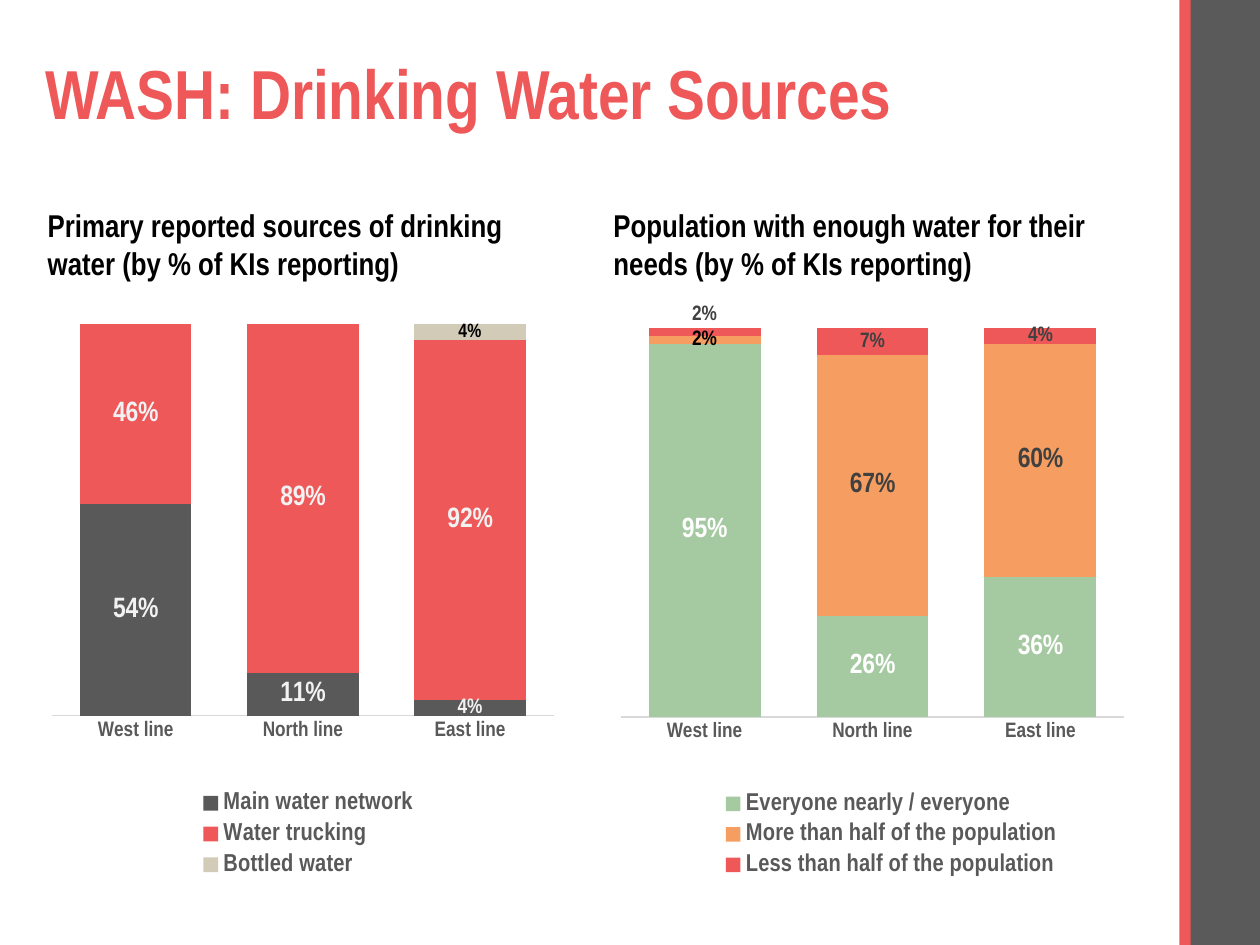
from lxml.etree import SubElement
from pptx import Presentation
from pptx.chart.data import CategoryChartData
from pptx.dml.color import RGBColor
from pptx.enum.chart import XL_CHART_TYPE, XL_LEGEND_POSITION, XL_TICK_LABEL_POSITION, XL_TICK_MARK
from pptx.enum.shapes import MSO_SHAPE
from pptx.enum.text import MSO_ANCHOR
from pptx.oxml import parse_xml
from pptx.oxml.ns import nsdecls, qn
from pptx.util import Inches, Pt

RED, GREY, LIGHT, DARK = "EE5859", "595959", "F2F2F2", "404040"


def style(font, size, color, bold=True):
    font.name = "Arial Narrow"
    font.size = Pt(size)
    font.bold = bold
    font.color.rgb = RGBColor.from_string(color)


def set_layout(parent, index, **settings):
    """Give a chart part a manual layout, as shares of the chart's size."""
    for old in parent.findall(qn("c:layout")):
        parent.remove(old)
    layout = parse_xml(f"<c:layout {nsdecls('c')}><c:manualLayout/></c:layout>")
    for name, value in settings.items():
        SubElement(layout[0], qn(f"c:{name}")).set("val", str(value))
    parent.insert(index, layout)


presentation = Presentation()
presentation.slide_width, presentation.slide_height = Inches(10), Inches(7.5)
slide = presentation.slides.add_slide(presentation.slide_layouts[6])

# Side band
for left, width, color in [(9.43, 0.57, "5A5A5A"), (9.36, 0.09, RED)]:
    band = slide.shapes.add_shape(MSO_SHAPE.RECTANGLE, Inches(left), 0,
                                  Inches(width), presentation.slide_height)
    band.shadow.inherit = False
    band.fill.solid()
    band.fill.fore_color.rgb = RGBColor.from_string(color)
    band.line.fill.background()

# Title and chart headings
texts = [
    ("WASH: Drinking Water Sources", 0.26, 0.4, 8.69, 0.74, 39.6, RED),
    ("Primary reported sources of drinking water (by % of KIs reporting)",
     0.28, 1.58, 4.18, 0.71, 18, "000000"),
    ("Population with enough water for their needs (by % of KIs reporting)",
     4.77, 1.58, 4.31, 0.71, 18, "000000"),
]
for text, left, top, width, height, size, color in texts:
    box = slide.shapes.add_textbox(Inches(left), Inches(top), Inches(width), Inches(height))
    frame = box.text_frame
    frame.word_wrap = True
    frame.vertical_anchor = MSO_ANCHOR.MIDDLE
    paragraph = frame.paragraphs[0]
    paragraph.text = text
    paragraph.line_spacing = 0.9 if size > 30 else 1.0
    style(paragraph.font, size, color)

# Charts: left, width, legend left and width (shares), series
# Series: name, fill, values, (size, colour) of each label
charts = [
    (0.26, 4.29, 0.3, 0.42, [
        ("Main water network", GREY, (0.54, 0.11, 0.04), [(16, LIGHT), (16, LIGHT), (12, LIGHT)]),
        ("Water trucking", RED, (0.46, 0.89, 0.92), [(16, LIGHT)] * 3),
        ("Bottled water", "D2CBB8", (0, 0, 0.04), [None, None, (11, "000000")]),
    ]),
    (4.77, 4.31, 0.21, 0.65, [
        ("Everyone nearly / everyone", "A5C9A1", (0.95, 0.26, 0.36), [(16, "FFFFFF")] * 3),
        ("More than half of the population", "F69E61", (0.02, 0.67, 0.6),
         [(12, "000000"), (16, DARK), (16, DARK)]),
        ("Less than half of the population", RED, (0.02, 0.07, 0.04), [(12, DARK)] * 3),
    ]),
]
for left, width, legend_left, legend_width, rows in charts:
    data = CategoryChartData(number_format="0%")
    data.categories = ["West line", "North line", "East line"]
    for name, _, values, _ in rows:
        data.add_series(name, values)
    chart = slide.shapes.add_chart(XL_CHART_TYPE.COLUMN_STACKED_100, Inches(left), Inches(2.42),
                                   Inches(width), Inches(4.64), data).chart
    style(chart.font, 10, "000000", False)
    chart.has_title = False

    plot = chart.plots[0]
    plot.gap_width, plot.overlap = 50, 100
    plot.vary_by_categories = False
    set_layout(chart._chartSpace.chart.plotArea, 0, layoutTarget="inner", xMode="edge",
               yMode="edge", x=0.036, y=0.033, w=0.928, h=0.67)

    chart.value_axis.visible = False
    chart.value_axis.has_major_gridlines = False
    chart.value_axis.maximum_scale = 1
    axis = chart.category_axis
    axis.major_tick_mark = XL_TICK_MARK.NONE
    axis.tick_label_position = XL_TICK_LABEL_POSITION.NEXT_TO_AXIS
    axis.format.line.color.rgb = RGBColor.from_string("D9D9D9")
    axis.format.line.width = Pt(0.75)
    style(axis.tick_labels.font, 12, GREY)

    chart.has_legend = True
    legend = chart.legend
    legend.position = XL_LEGEND_POSITION.BOTTOM
    legend.include_in_layout = False
    style(legend.font, 14, GREY)
    set_layout(legend._element, 1, xMode="edge", yMode="edge",
               x=legend_left, y=0.82, w=legend_width, h=0.17)

    for series, (_, fill, _, labels) in zip(plot.series, rows):
        series.format.fill.solid()
        series.format.fill.fore_color.rgb = RGBColor.from_string(fill)
        series.data_labels.show_value = False
        for index, label in enumerate(labels):
            if label:
                style(series.points[index].data_label.font, *label)

# Lift the top label of the second chart's first column above its thin segment
top_labels = chart.plots[0].series[2].data_labels._element
set_layout(top_labels.find(qn("c:dLbl")), 1, x=0, y=-0.03)

presentation.save("out.pptx")
